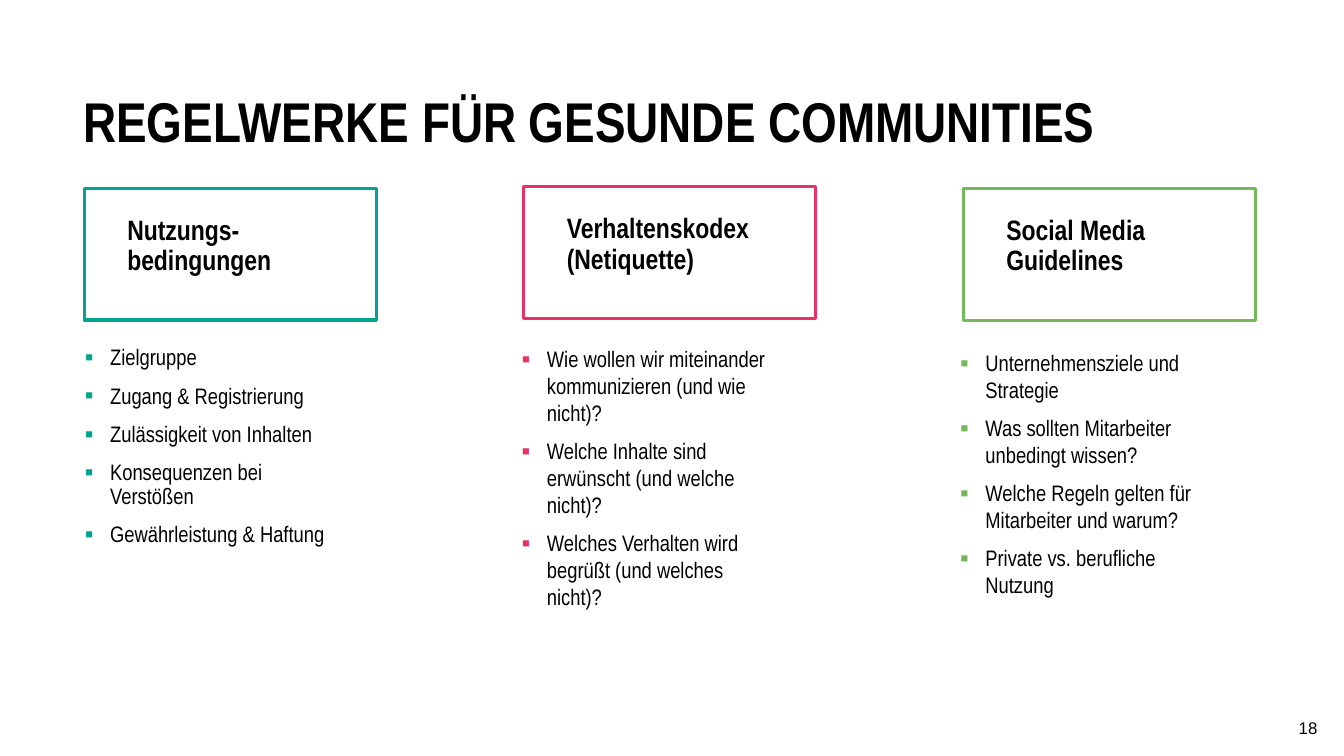
from lxml import etree
from pptx import Presentation
from pptx.dml.color import RGBColor
from pptx.enum.shapes import MSO_SHAPE
from pptx.enum.text import MSO_ANCHOR, PP_ALIGN
from pptx.oxml.ns import qn
from pptx.util import Pt

RECTANGLE = MSO_SHAPE.RECTANGLE
MIDDLE = MSO_ANCHOR.MIDDLE
RIGHT = PP_ALIGN.RIGHT

BLACK = RGBColor(0x00, 0x00, 0x00)
TEAL = RGBColor(0x00, 0xA4, 0x8F)
PINK = RGBColor(0xE6, 0x32, 0x64)
GREEN = RGBColor(0x73, 0xB9, 0x5A)

INDENT = Pt(14.4)
HANGING = Pt(-13.5)
FRAME_LEFT, FRAME_PITCH = 45.2, 235.44
FRAME_WIDTH, FRAME_HEIGHT = 156.4, 70.6

# Font formats
TITLE = {"name": "Arial Narrow", "size": Pt(30), "bold": True}
HEADING = {"name": "Arial Narrow", "size": Pt(15), "bold": True}
BODY = {"name": "Arial Narrow", "size": Pt(12)}
PAGE_NUMBER = {"name": "Arial", "size": Pt(9)}

# Paragraph formats of the lists
TIGHT = {"line_spacing": 0.9, "space_before": Pt(7.5)}
LOOSE = {"space_after": Pt(6)}

COLUMNS = [
    {"heading": "Nutzungs-bedingungen", "color": TEAL, "frame_top": 100.9,
     "list_at": (37.5, 182.1), "spacing": TIGHT,
     "items": ["Zielgruppe", "Zugang & Registrierung",
               "Zulässigkeit von Inhalten", "Konsequenzen bei Verstößen",
               "Gewährleistung & Haftung"]},
    {"heading": "Verhaltenskodex (Netiquette)", "color": PINK, "frame_top": 100,
     "list_at": (271.5, 181.5), "spacing": LOOSE,
     "items": ["Wie wollen wir miteinander kommunizieren (und wie nicht)?",
               "Welche Inhalte sind erwünscht (und welche nicht)?",
               "Welches Verhalten wird begrüßt (und welches nicht)?"]},
    {"heading": "Social Media Guidelines", "color": GREEN, "frame_top": 101,
     "list_at": (506.4, 183.6), "spacing": LOOSE,
     "items": ["Unternehmensziele und Strategie",
               "Was sollten Mitarbeiter unbedingt wissen?",
               "Welche Regeln gelten für Mitarbeiter und warum?",
               "Private vs. berufliche Nutzung"]},
]


def apply_format(target, values):
    for name, value in values.items():
        setattr(target, name, value)


def set_indent(para, first_line=0):
    properties = para._p.get_or_add_pPr()
    properties.set("marL", str(INDENT))
    properties.set("indent", str(first_line))


def add_bullet(para, color):
    set_indent(para, HANGING)
    properties = para._p.get_or_add_pPr()
    bullet_color = etree.SubElement(properties, qn("a:buClr"))
    etree.SubElement(bullet_color, qn("a:srgbClr"), val=str(color))
    etree.SubElement(properties, qn("a:buSzPct"), val="110000")
    etree.SubElement(properties, qn("a:buFont"), typeface="Arial")
    etree.SubElement(properties, qn("a:buChar"), char="▪")


def add_span(para, text, font_format):
    span = para.add_run()
    span.text = text
    apply_format(span.font, font_format)
    span.font.color.rgb = BLACK


def add_text_box(page, left, top, width, height):
    box = page.shapes.add_textbox(Pt(left), Pt(top), Pt(width), Pt(height))
    box.text_frame.word_wrap = True
    return box.text_frame


def add_line_of_text(page, bounds, text, font_format, para_format):
    frame = add_text_box(page, *bounds)
    para = frame.paragraphs[0]
    apply_format(para, para_format)
    add_span(para, text, font_format)
    return frame


def add_heading_frame(page, left, top, column):
    rectangle = page.shapes.add_shape(
        RECTANGLE, Pt(left), Pt(top), Pt(FRAME_WIDTH), Pt(FRAME_HEIGHT))
    rectangle.shadow.inherit = False
    rectangle.fill.background()
    rectangle.line.color.rgb = column["color"]
    rectangle.line.width = Pt(1.75)
    heading = add_line_of_text(page, (left + 1.5, top + 11.4, 154, 59),
                               column["heading"], HEADING, {"line_spacing": 0.9})
    set_indent(heading.paragraphs[0])


def add_bullet_list(page, column):
    frame = add_text_box(page, *column["list_at"], 154, 177)
    for index, item in enumerate(column["items"]):
        para = frame.add_paragraph() if index else frame.paragraphs[0]
        add_bullet(para, column["color"])
        apply_format(para, column["spacing"])
        if index == 0:
            para.space_before = Pt(0)
        add_span(para, item, BODY)


def main():
    deck = Presentation()
    deck.slide_width, deck.slide_height = Pt(720), Pt(405)
    page = deck.slides.add_slide(deck.slide_layouts[6])

    # Title
    add_line_of_text(page, (37.5, 40.3, 566, 42.5),
                     "REGELWERKE FÜR GESUNDE COMMUNITIES", TITLE,
                     {"line_spacing": Pt(38.4)})

    # Three columns: framed heading above a bullet list
    for index, column in enumerate(COLUMNS):
        left = FRAME_LEFT + index * FRAME_PITCH
        add_heading_frame(page, left, column["frame_top"], column)
        add_bullet_list(page, column)

    # Page number
    number = add_line_of_text(page, (670.3, 379.4, 42.5, 21.6), "18",
                              PAGE_NUMBER, {"alignment": RIGHT})
    number.vertical_anchor = MIDDLE

    deck.save("out.pptx")


if __name__ == "__main__":
    main()
